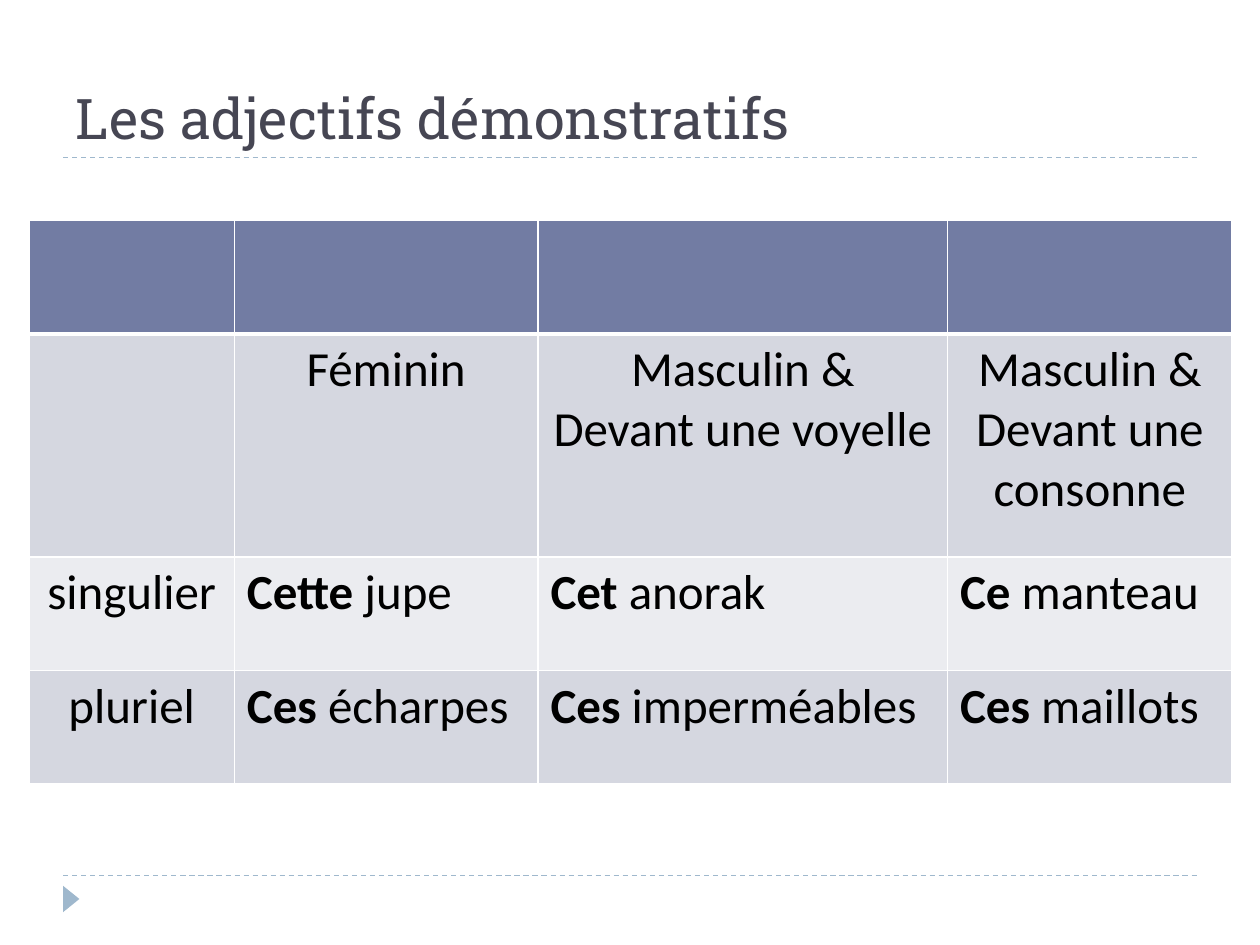
from lxml.etree import SubElement
from pptx import Presentation
from pptx.dml.color import RGBColor
from pptx.enum.dml import MSO_LINE_DASH_STYLE as Dash
from pptx.enum.shapes import MSO_CONNECTOR as Connector, MSO_SHAPE as Shape
from pptx.enum.text import MSO_ANCHOR as Anchor, PP_ALIGN as Align
from pptx.oxml.ns import qn
from pptx.util import Inches, Pt

ACCENT = "9FB8CD"
HEADER = "727CA3"
BANDS = ("D5D7E0", "EBECF0")
COLUMN_WIDTHS = (1.63, 2.41, 3.25, 2.26)
ROW_HEIGHTS = (0.9, 1.77, 0.9, 0.9)
ROWS = (
    ("", "", "", ""),
    ("", "Féminin", "Masculin &\nDevant une voyelle", "Masculin &\nDevant une consonne"),
    ("singulier", "Cette jupe", "Cet anorak", "Ce manteau"),
    ("pluriel", "Ces écharpes", "Ces imperméables", "Ces maillots"),
)


def color(value):
    return RGBColor.from_string(value)


class SlideBuilder:
    """Hold the text styles and the current slide, and add elements to it."""

    title_style = {"name": "Roboto Slab", "size": Pt(32), "bold": False}
    cell_style = {"name": "Calibri", "size": Pt(28), "bold": False}

    def __init__(self, presentation):
        self.slide = presentation.slides.add_slide(presentation.slide_layouts[5])

    def add_run(self, paragraph, text, style, text_color, **changes):
        run = paragraph.add_run()
        run.text = text
        for name, value in {**style, **changes}.items():
            setattr(run.font, name, value)
        run.font.color.rgb = color(text_color)

    def title(self, text, left, top, width, height):
        title = self.slide.shapes.title
        box = {"left": left, "top": top, "width": width, "height": height}
        for name, value in box.items():
            setattr(title, name, Inches(value))
        title.text_frame.vertical_anchor = Anchor.BOTTOM
        paragraph = title.text_frame.paragraphs[0]
        paragraph.alignment = Align.LEFT
        self.add_run(paragraph, text, self.title_style, "464653")

    def rule(self, left, right, top):
        line = self.slide.shapes.add_connector(
            Connector.STRAIGHT, Inches(left), Inches(top), Inches(right), Inches(top))
        line.line.color.rgb = color(ACCENT)
        line.line.width = Pt(0.75)
        line.line.dash_style = Dash.DASH
        SubElement(line._element.spPr, qn("a:effectLst"))

    def triangle(self, left, top, width, height, rotation):
        box = (Inches(value) for value in (left, top, width, height))
        shape = self.slide.shapes.add_shape(Shape.ISOSCELES_TRIANGLE, *box)
        shape.rotation = rotation
        shape.shadow.inherit = False
        shape.fill.solid()
        shape.fill.fore_color.rgb = color(ACCENT)
        shape.line.fill.background()

    def border(self, cell, side, width):
        properties = cell._tc.get_or_add_tcPr()
        line = SubElement(properties, qn(f"a:ln{side}"), w=str(Pt(width)))
        fill = SubElement(line, qn("a:solidFill"))
        SubElement(fill, qn("a:srgbClr"), val="FFFFFF")

    def cell(self, cell, text, row, column):
        thick_side = {0: "B", 1: "T"}.get(row)
        for side in "LRTB":
            self.border(cell, side, 3 if side == thick_side else 1)
        cell.fill.solid()
        cell.fill.fore_color.rgb = color(HEADER if row == 0 else BANDS[(row + 1) % 2])
        if not text:
            return
        is_label = row == 1 or column == 0
        for index, line in enumerate(text.split("\n")):
            frame = cell.text_frame
            paragraph = frame.add_paragraph() if index else frame.paragraphs[0]
            paragraph.alignment = Align.CENTER if is_label else Align.LEFT
            if is_label:
                self.add_run(paragraph, line, self.cell_style, "000000")
            else:
                adjective, noun = line.split()
                self.add_run(paragraph, adjective + " ", self.cell_style, "000000", bold=True)
                self.add_run(paragraph, noun, self.cell_style, "000000")

    def table(self, left, top, widths, heights, rows):
        table = self.slide.shapes.add_table(
            len(heights), len(widths), Inches(left), Inches(top),
            Inches(sum(widths)), Inches(sum(heights))).table
        for column, width in zip(table.columns, widths):
            column.width = Inches(width)
        for row, height in zip(table.rows, heights):
            row.height = Inches(height)
        for row, texts in enumerate(rows):
            for column, text in enumerate(texts):
                self.cell(table.cell(row, column), text, row, column)


def main():
    presentation = Presentation()
    presentation.slide_width = Inches(10)
    presentation.slide_height = Inches(7.5)
    builder = SlideBuilder(presentation)
    for top in (6.95, 1.25):
        builder.rule(0.5, 9.5, top)
    builder.triangle(0.46, 7.07, 0.21, 0.13, 90)
    builder.title("Les adjectifs démonstratifs", 0.5, 0.17, 9, 1.08)
    builder.table(0.23, 1.75, COLUMN_WIDTHS, ROW_HEIGHTS, ROWS)
    presentation.save("out.pptx")


if __name__ == "__main__":
    main()
